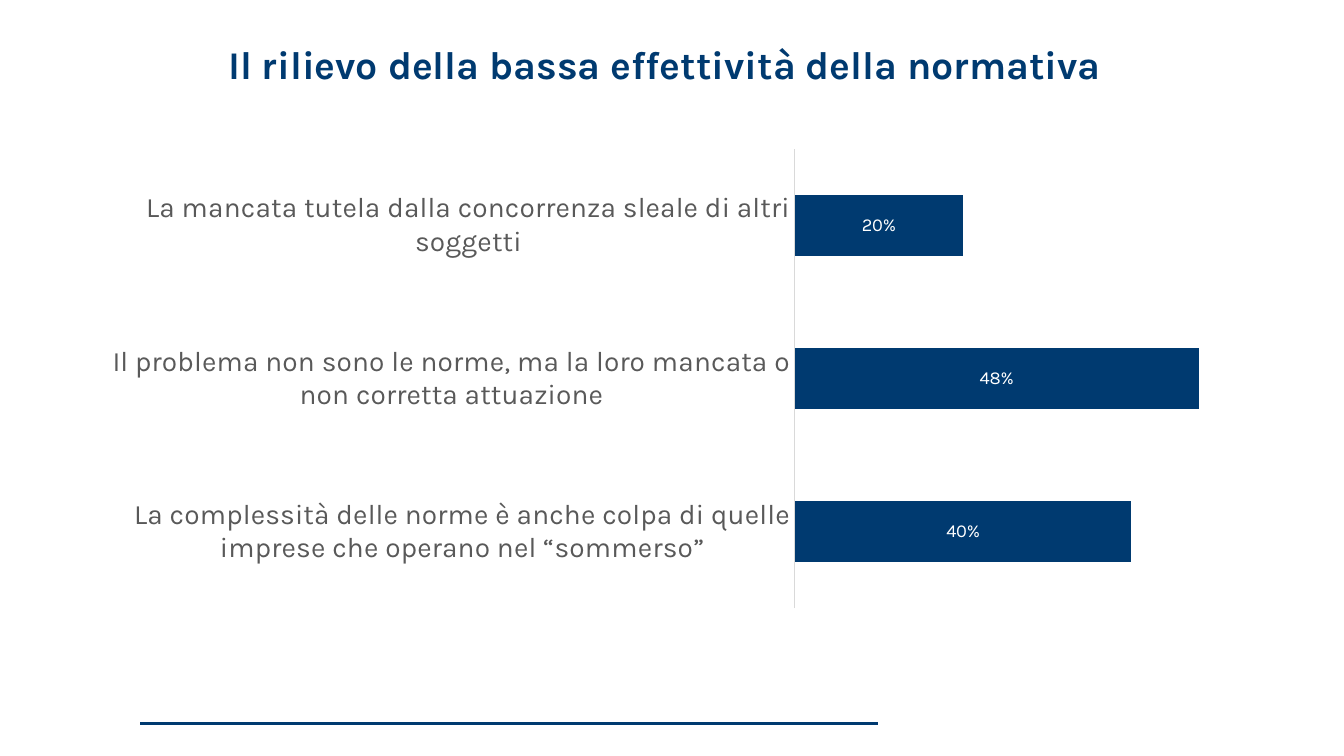
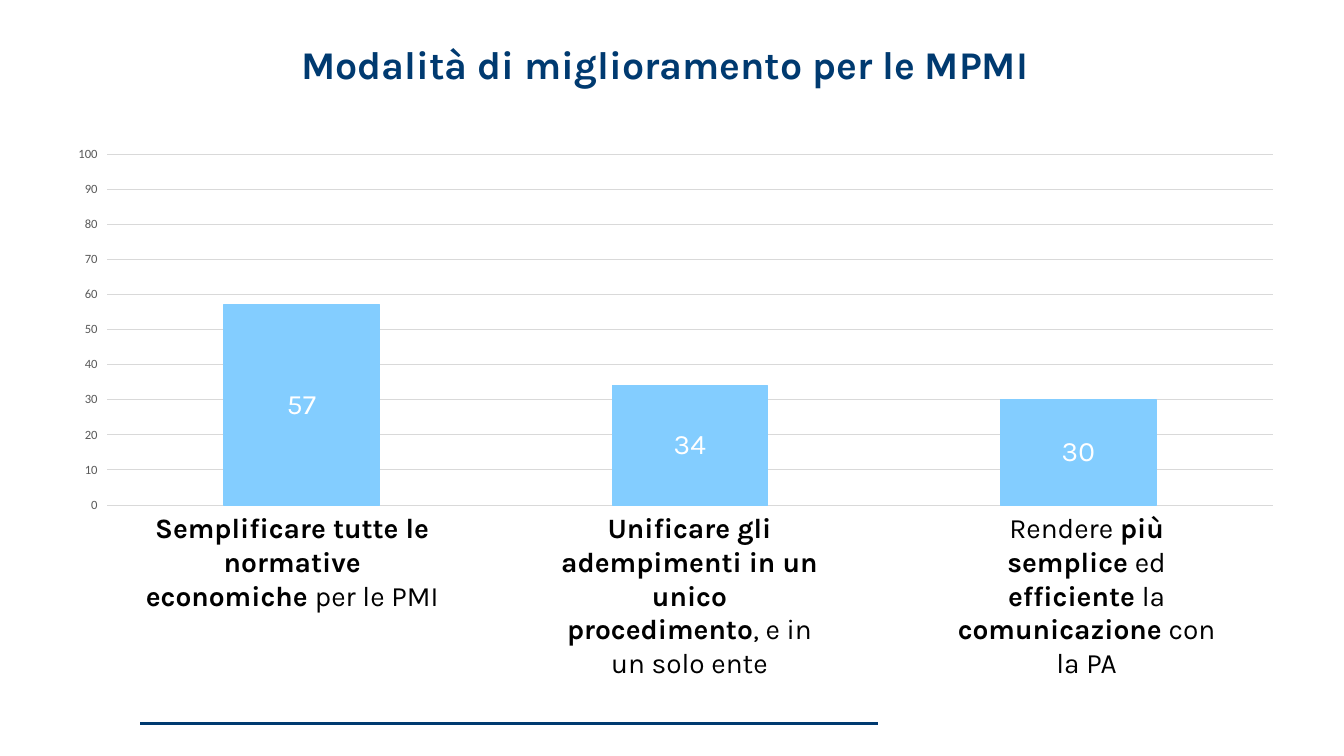
from pptx import Presentation
from pptx.chart.data import CategoryChartData
from pptx.dml.color import RGBColor
from pptx.enum.chart import XL_CHART_TYPE, XL_LABEL_POSITION, XL_TICK_MARK
from pptx.enum.shapes import MSO_CONNECTOR
from pptx.enum.text import MSO_ANCHOR, MSO_AUTO_SIZE, PP_ALIGN
from pptx.oxml.ns import qn
from pptx.util import Inches, Pt
from lxml import etree

NAVY = RGBColor(0x00, 0x3A, 0x70)
SKY = RGBColor(0x83, 0xCD, 0xFF)
GRAY = RGBColor(0x59, 0x59, 0x59)
PALE_GRAY = RGBColor(0xD9, 0xD9, 0xD9)
WHITE = RGBColor(0xFF, 0xFF, 0xFF)
BLACK = RGBColor(0x00, 0x00, 0x00)

BRAND_FONT = "Karla"
CHART_FONT = "Calibri"

BAR = XL_CHART_TYPE.BAR_STACKED
COLUMN = XL_CHART_TYPE.COLUMN_STACKED
LABEL_CENTER = XL_LABEL_POSITION.CENTER
TICK_NONE = XL_TICK_MARK.NONE
TICK_OUT = XL_TICK_MARK.OUTSIDE
STRAIGHT = MSO_CONNECTOR.STRAIGHT
TOP = MSO_ANCHOR.TOP
FIXED = MSO_AUTO_SIZE.NONE
GROW = MSO_AUTO_SIZE.SHAPE_TO_FIT_TEXT
CENTER = PP_ALIGN.CENTER

SLIDE_WIDTH = Inches(13.33)
SLIDE_HEIGHT = Inches(7.5)
TITLE_ONLY = 5

CHART_TOP = 18.4
CAPTION_TOP = 66.93
CAPTION_HEIGHT = 19.33
FIRST_CAPTION_CENTER = 21.75
CAPTION_PITCH = 29.55

NORM_FINDINGS = {
    "La complessità delle norme è anche colpa di quelle imprese che operano nel “sommerso”": 40,
    "Il problema non sono le norme, ma la loro mancata o non corretta attuazione": 48,
    "La mancata tutela dalla concorrenza sleale di altri soggetti": 20,
}
IMPROVEMENTS = {"1": 57, "2": 34, "3": 30}
CAPTIONS = [
    (23.7, [("Semplificare tutte le normative economiche ", True), ("per le PMI", False)]),
    (21.38, [("Unificare gli adempimenti in un unico procedimento", True),
             (", e in un solo ente", False)]),
    (22.5, [("Rendere ", False), ("più semplice", True), (" ed ", False),
            ("efficiente", True), (" la ", False), ("comunicazione", True),
            (" con la PA", False)]),
]


def across(percent):
    return int(SLIDE_WIDTH * percent / 100)


def down(percent):
    return int(SLIDE_HEIGHT * percent / 100)


def area(left, top, width, height):
    return across(left), down(top), across(width), down(height)


def style_font(font, name, size, color, bold=None):
    font.name = name
    font.size = Pt(size)
    font.color.rgb = color
    font.bold = bold


def style_line(line, color, width):
    line.color.rgb = color
    line.width = Pt(width)


def add_footer_rule(slide):
    rule = slide.shapes.add_connector(
        STRAIGHT, across(10.42), down(95.73), across(65.33), down(95.73))
    style_line(rule.line, NAVY, 2.25)
    etree.SubElement(rule.element.spPr, qn("a:effectLst"))


def add_titled_slide(deck, heading):
    slide = deck.slides.add_slide(deck.slide_layouts[TITLE_ONLY])
    add_footer_rule(slide)
    title = slide.shapes.title
    title.left, title.top, title.width, title.height = area(3.45, 5.33, 92, 14.53)
    frame = title.text_frame
    frame.text = heading
    frame.word_wrap = True
    frame.auto_size = FIXED
    frame.vertical_anchor = TOP
    paragraph = frame.paragraphs[0]
    paragraph.alignment = CENTER
    paragraph.line_spacing = 0.9
    paragraph.space_after = Pt(6)
    style_font(paragraph.font, BRAND_FONT, 28, NAVY, True)
    return slide


def add_stacked_chart(slide, kind, place, values, color, font_size, label_size, label_format):
    chart_data = CategoryChartData()
    chart_data.categories = list(values)
    chart_data.add_series("Series 1", list(values.values()))
    chart = slide.shapes.add_chart(kind, *area(*place), chart_data).chart
    style_font(chart.font, CHART_FONT, font_size, BLACK)
    chart.has_legend = False
    chart.has_title = False
    plot = chart.plots[0]
    plot.gap_width = 150
    plot.overlap = 100
    plot.vary_by_categories = False
    fill = plot.series[0].format.fill
    fill.solid()
    fill.fore_color.rgb = color
    plot.has_data_labels = True
    labels = plot.data_labels
    labels.show_value = True
    labels.position = LABEL_CENTER
    labels.number_format = label_format
    labels.number_format_is_linked = False
    style_font(labels.font, BRAND_FONT, label_size, WHITE)
    return chart


def add_caption(slide, index, width, pieces):
    left = FIRST_CAPTION_CENTER + CAPTION_PITCH * index - width / 2
    caption = slide.shapes.add_textbox(*area(left, CAPTION_TOP, width, CAPTION_HEIGHT))
    frame = caption.text_frame
    frame.word_wrap = True
    frame.auto_size = GROW
    paragraph = frame.paragraphs[0]
    paragraph.alignment = CENTER
    style_font(paragraph.font, BRAND_FONT, 20, BLACK)
    for text, bold in pieces:
        run = paragraph.add_run()
        run.text = text
        run.font.bold = bold


def build_norms_slide(deck):
    slide = add_titled_slide(deck, "Il rilievo della bassa effettività della normativa")
    chart = add_stacked_chart(slide, BAR, (6.53, CHART_TOP, 92, 63.33),
                              NORM_FINDINGS, NAVY, 13, 13, '0"%"')
    findings = chart.category_axis
    findings.major_tick_mark = TICK_NONE
    style_font(findings.tick_labels.font, BRAND_FONT, 20, GRAY)
    style_line(findings.format.line, PALE_GRAY, 0.75)
    shares = chart.value_axis
    shares.visible = False
    shares.has_major_gridlines = False
    shares.minimum_scale = 0
    shares.maximum_scale = 60


def build_improvements_slide(deck):
    slide = add_titled_slide(deck, "Modalità di miglioramento per le MPMI")
    chart = add_stacked_chart(slide, COLUMN, (3.98, CHART_TOP, 92.55, 50.4),
                              IMPROVEMENTS, SKY, 10, 20, "0")
    style_line(chart.plots[0].series[0].format.line, SKY, 0.75)
    chart.category_axis.visible = False
    scale = chart.value_axis
    scale.minimum_scale = 0
    scale.maximum_scale = 100
    scale.major_unit = 10
    scale.major_tick_mark = TICK_OUT
    scale.format.line.fill.background()
    style_font(scale.tick_labels.font, CHART_FONT, 9, GRAY)
    style_line(scale.major_gridlines.format.line, PALE_GRAY, 0.75)
    for index, (width, pieces) in enumerate(CAPTIONS):
        add_caption(slide, index, width, pieces)


def main():
    deck = Presentation()
    deck.slide_width = SLIDE_WIDTH
    deck.slide_height = SLIDE_HEIGHT
    build_norms_slide(deck)
    build_improvements_slide(deck)
    deck.save("out.pptx")


if __name__ == "__main__":
    main()
